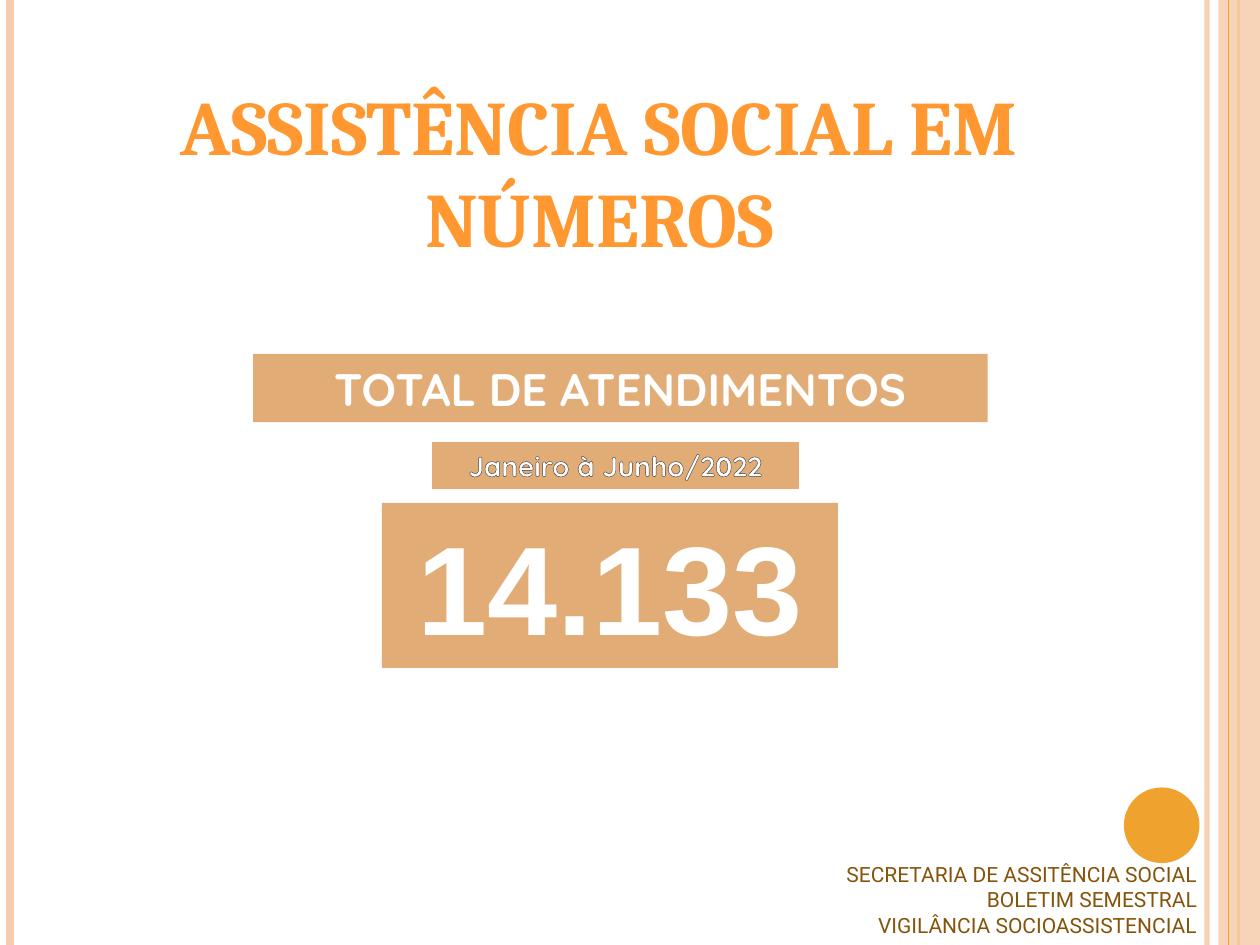
import pptx
import pptx.util
import pptx.dml.color
import pptx.enum.shapes
import pptx.enum.text
import pptx.oxml
import pptx.oxml.ns
import lxml.etree

Inches = pptx.util.Inches
Pt = pptx.util.Pt
Shape = pptx.enum.shapes.MSO_SHAPE
Align = pptx.enum.text.PP_ALIGN
Anchor = pptx.enum.text.MSO_ANCHOR
qn = pptx.oxml.ns.qn

COLORS = {"peach": "F6CEAD", "amber": "F0A22E", "title": "FF9831", "tan": "E2AC76",
          "white": "FFFFFF", "brown": "85540A", "outline": "404040"}
WIDTH, HEIGHT = 10, 7.5


def paint(fill, color, opacity=100):
    """Fill with a named colour; opacity is a percentage."""
    fill.solid()
    fill.fore_color.rgb = pptx.dml.color.RGBColor.from_string(COLORS[color])
    if opacity < 100:
        for value in fill.fore_color._xFill.iter(qn("a:srgbClr")):
            lxml.etree.SubElement(value, qn("a:alpha"), val=str(opacity * 1000))


def write(box, lines, size, font, color, bold=True, align=Align.CENTER,
          anchor=Anchor.MIDDLE, wrap=True, outline=None):
    """Set one paragraph per line; outline is (colour, width in points)."""
    frame = box.text_frame
    frame.auto_size = pptx.enum.text.MSO_AUTO_SIZE.NONE
    frame.word_wrap = wrap
    frame.vertical_anchor = anchor
    for number, line in enumerate(lines):
        para = frame.add_paragraph() if number else frame.paragraphs[0]
        para.alignment = align
        span = para.add_run()
        span.text = line
        span.font.name, span.font.size, span.font.bold = font, Pt(size), bold
        paint(span.font.fill, color)
        if outline:
            name, width = outline
            border = lxml.etree.Element(qn("a:ln"), w=str(Pt(width)))
            fill = lxml.etree.SubElement(border, qn("a:solidFill"))
            lxml.etree.SubElement(fill, qn("a:srgbClr"), val=COLORS[name])
            span.font._element.insert(0, border)


deck = pptx.Presentation()
deck.slide_width, deck.slide_height = Inches(WIDTH), Inches(HEIGHT)
page = deck.slides.add_slide(deck.slide_layouts[5])

# Side stripes, band and disc, from back to front
decorations = [
    ("stripe", 9.58, 3, "peach", 93),
    ("stripe", 0.08, 4.5, "peach", 100),
    ("stripe", 9.83, 1.5, "amber", 100),
    (Shape.RECTANGLE, (9.67, 0, 0.33, HEIGHT), None, "peach", 87),
    ("stripe", 9.75, 0.75, "amber", 100),
    (Shape.OVAL, (8.92, 6.25, 0.6, 0.6), None, "amber", 100),
]
for kind, place, weight, color, opacity in decorations:
    if kind == "stripe":
        stripe = page.shapes.add_connector(
            pptx.enum.shapes.MSO_CONNECTOR.STRAIGHT,
            Inches(place), 0, Inches(place), Inches(HEIGHT))
        stripe.line.width = Pt(weight)
        paint(stripe.line.fill, color, opacity)
        lxml.etree.SubElement(stripe._element.spPr, qn("a:effectLst"))
    else:
        ornament = page.shapes.add_shape(kind, *map(Inches, place))
        ornament.shadow.inherit = False
        ornament.line.fill.background()
        paint(ornament.fill, color, opacity)

# Title
title = page.shapes.title
title.left, title.top, title.width, title.height = map(Inches, (0.43, -0.34, 8.66, 2.48))
write(title, ["ASSISTÊNCIA SOCIAL EM NÚMEROS"], 44, "Cambria", "title", anchor=Anchor.BOTTOM)

# Total, period and heading panels
panels = [
    ("TOTAL DE ATENDIMENTOS", (2.01, 2.81, 5.83, 0.54), 26, "Quicksand", None),
    ("14.133", (3.03, 3.99, 3.62, 1.31), 72, "Arial", None),
    ("Janeiro à Junho/2022", (3.43, 3.51, 2.91, 0.37), 16, "Quicksand", ("outline", 0.75)),
]
for text, place, size, font, outline in panels:
    panel = page.shapes.add_shape(Shape.RECTANGLE, *map(Inches, place))
    panel.shadow.inherit = False
    panel.line.fill.background()
    paint(panel.fill, "tan")
    write(panel, [text], size, font, "white", outline=outline)

# Signature
signature = page.shapes.add_textbox(*map(Inches, (6.6, 6.79, 3, 0.71)))
write(signature,
      ["SECRETARIA DE ASSITÊNCIA SOCIAL", "BOLETIM SEMESTRAL", "VIGILÂNCIA SOCIOASSISTENCIAL"],
      12, "Roboto", "brown", bold=False, align=Align.RIGHT, anchor=Anchor.TOP, wrap=False)

deck.save("out.pptx")
